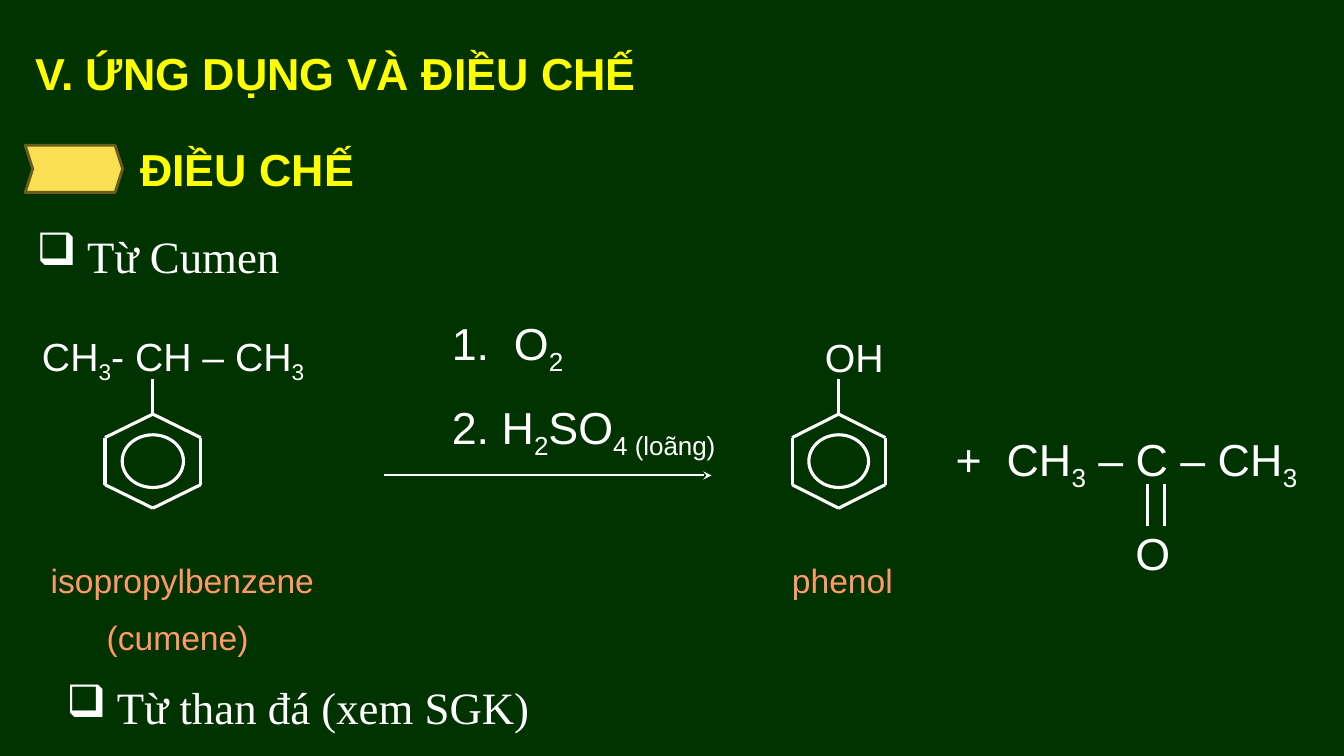
import dataclasses
import pptx
import pptx.dml.color
import pptx.enum.shapes
import pptx.enum.text
import pptx.oxml.ns
import pptx.util
import lxml.etree

COLS, ROWS = 160, 90
CELL = pptx.util.Inches(7.5) / ROWS
ALIGN = pptx.enum.text.PP_ALIGN
SHAPE = pptx.enum.shapes.MSO_SHAPE


@dataclasses.dataclass(frozen=True)
class Theme:
    back: str = "003300"
    heading: str = "FFFF00"
    ink: str = "FFFFFF"
    name: str = "FF9966"
    marker: str = "FBDF53"
    marker_edge: str = "6A5D1E"
    sans: str = "Arial"
    serif: str = "Times New Roman"
    big: int = 32
    formula: int = 28
    small: int = 24
    bond: float = 2.25
    double_bond: float = 2
    arrow: float = 1.5


T = Theme()


@dataclasses.dataclass(frozen=True)
class Box:
    x: float
    y: float
    w: float
    h: float

    def at(self, dx, dy, w, h):
        return Box(self.x + dx, self.y + dy, w, h)

    def point(self, fx, fy):
        return self.x + fx * self.w, self.y + fy * self.h

    def share(self, fx, fy, fw, fh):
        return Box(*self.point(fx, fy), fw * self.w, fh * self.h)

    def emu(self):
        return [round(v * CELL) for v in (self.x, self.y, self.w, self.h)]


def rgb(color):
    return pptx.dml.color.RGBColor.from_string(color)


def add_node(parent, tag, **attrs):
    return lxml.etree.SubElement(parent, pptx.oxml.ns.qn(tag), attrs)


def write(tf, lines, size, color=T.ink, font=T.sans, bold=False,
          align=ALIGN.LEFT, gap=0):
    tf.word_wrap = True
    tf.auto_size = pptx.enum.text.MSO_AUTO_SIZE.NONE
    tf.vertical_anchor = pptx.enum.text.MSO_ANCHOR.TOP
    for i, line in enumerate(lines):
        p = tf.paragraphs[0] if i == 0 else tf.add_paragraph()
        p.alignment = align
        if i:
            p.space_before = pptx.util.Pt(gap)
        for j, part in enumerate(filter(None, line.split("|"))):
            r = p.add_run()
            r.text = part
            r.font.size = pptx.util.Pt(size)
            r.font.name = font
            r.font.bold = bold
            r.font.color.rgb = rgb(color)
            if j % 2:
                r.font._element.set("baseline", "-25000")


def add_text(s, box, lines, size, inset=True, **style):
    tf = s.shapes.add_textbox(*box.emu()).text_frame
    if not inset:
        tf.margin_left = tf.margin_right = tf.margin_top = tf.margin_bottom = 0
    write(tf, lines, size, **style)
    return tf


def add_line(s, start, end, width, arrow=False):
    ends = [round(v * CELL) for v in (*start, *end)]
    c = s.shapes.add_connector(pptx.enum.shapes.MSO_CONNECTOR.STRAIGHT, *ends)
    c.line.color.rgb = rgb(T.ink)
    c.line.width = pptx.util.Pt(width)
    if arrow:
        add_node(c.line._get_or_add_ln(), "a:tailEnd", type="stealth")
    add_node(c._element.spPr, "a:effectLst")


def add_preset(s, kind, box, edge, width, fill=None):
    sp = s.shapes.add_shape(kind, *box.emu())
    sp.shadow.inherit = False
    if fill:
        sp.fill.solid()
        sp.fill.fore_color.rgb = rgb(fill)
    else:
        sp.fill.background()
    sp.line.color.rgb = rgb(edge)
    sp.line.width = pptx.util.Pt(width)
    return sp


def title(s, box):
    sp = s.shapes.title
    sp.left, sp.top, sp.width, sp.height = box.emu()
    write(sp.text_frame, ["V. ỨNG DỤNG VÀ ĐIỀU CHẾ"], T.big,
          color=T.heading, bold=True)


def subheading(s, box):
    chevron = add_preset(s, SHAPE.CHEVRON, box.at(0, 1, 11.6, 5.6),
                         T.marker_edge, 2, T.marker)
    chevron.adjustments[0] = 0.16
    add_text(s, box.at(12.5, 0, 28.2, box.h), ["ĐIỀU CHẾ"], T.big,
             color=T.heading, bold=True)


def bullet(s, box, text):
    tf = add_text(s, box, [text], T.big, font=T.serif, align=ALIGN.CENTER)
    pPr = tf.paragraphs[0]._p.get_or_add_pPr()
    indent = pptx.util.Inches(0.31)
    pPr.set("marL", str(indent))
    pPr.set("indent", str(-indent))
    add_node(add_node(pPr, "a:buClr"), "a:srgbClr", val=T.ink)
    add_node(pPr, "a:buChar", char="❑")


def benzene_ring(s, box):
    shares = [(0.5, 0), (1, 0.25), (1, 0.75), (0.5, 1), (0, 0.75), (0, 0.25)]
    corners = [box.point(*c) for c in shares]
    for a, b in zip(corners, corners[1:] + corners[:1]):
        add_line(s, a, b, T.bond)
    add_line(s, box.point(0.5, -0.37), corners[0], T.bond)
    add_preset(s, SHAPE.OVAL, box.share(0.18, 0.22, 0.64, 0.56), T.ink, T.bond)


def cumene(s, box):
    add_text(s, box.at(5, 0, 41.6, 5.6), ["CH|3|- CH – CH|3"], T.formula,
             inset=False)
    benzene_ring(s, box.at(12.5, 9.8, 11.4, 11.2))
    add_text(s, box.at(0, 26.6, box.w, 13.3), ["isopropylbenzene", "(cumene) "],
             T.small, color=T.name, align=ALIGN.CENTER, gap=12)


def conditions(s, box):
    add_text(s, box.at(6.9, 0, 39, 17.4), ["1.  O|2", "2. H|2|SO|4 (loãng)"],
             T.big, gap=16)
    add_line(s, box.point(0, 1), box.point(1, 1), T.arrow, arrow=True)


def phenol(s, box):
    add_text(s, box.at(5.1, 0.2, 9.4, 5.6), ["OH"], T.formula, inset=False)
    benzene_ring(s, box.at(1.2, 9.8, 11.1, 11.2))
    add_text(s, box.at(0, 26.6, box.w, 6.1), ["phenol"], T.small, color=T.name)


def acetone(s, box):
    add_text(s, box.at(0, 0, box.w, 7.7), [" +  CH|3| – C – CH|3"], T.big)
    for dx in (25.5, 27.5):
        bond = box.at(dx, 6.8, 0, 5)
        add_line(s, bond.point(0, 0), bond.point(0, 1), T.double_bond)
    add_text(s, box.at(22.9, 11.2, 6, 7.7), ["O"], T.big)


def main():
    prs = pptx.Presentation()
    prs.slide_width, prs.slide_height = round(COLS * CELL), round(ROWS * CELL)
    s = prs.slides.add_slide(prs.slide_layouts[5])
    s.background.fill.solid()
    s.background.fill.fore_color.rgb = rgb(T.back)
    title(s, Box(3, 4.8, 74.6, 7.7))
    cumene(s, Box(0, 39.5, 43.4, 40))
    conditions(s, Box(45.7, 37, 39, 19.6))
    phenol(s, Box(93.1, 39.5, 16.1, 33))
    acetone(s, Box(111.1, 50.8, 48.9, 19))
    subheading(s, Box(3, 16.3, 41, 7.7))
    bullet(s, Box(0, 26.6, 39, 7.7), " Từ Cumen ")
    bullet(s, Box(1.3, 80.3, 69.7, 7.7), " Từ than đá (xem SGK) ")
    prs.save("out.pptx")


if __name__ == "__main__":
    main()
